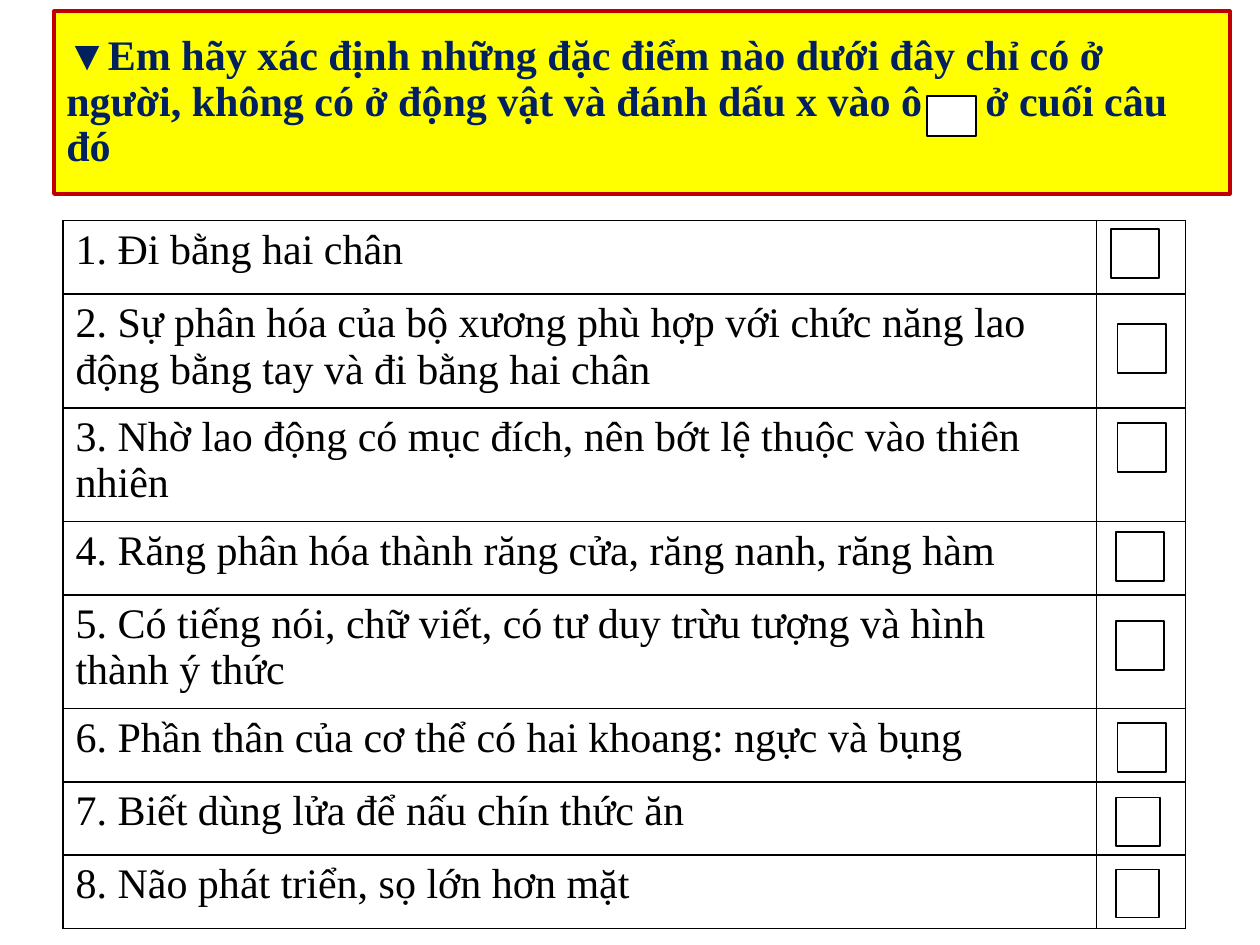
from dataclasses import dataclass

from lxml import etree
from pptx import Presentation
from pptx import util as u
from pptx.dml.color import RGBColor
from pptx.enum import shapes, text
from pptx.oxml import ns


@dataclass(frozen=True)
class Theme:
    font: str = "Times New Roman"
    size: int = 24
    ink: str = "000000"
    paper: str = "FFFFFF"
    heading_ink: str = "002060"
    heading_fill: str = "FFFF00"
    heading_line: str = "C00000"
    thin: float = 1
    thick: float = 2.25


@dataclass(frozen=True)
class Frame:
    """Left, top, width and height in centimetres."""
    left: float
    top: float
    width: float = 0.97
    height: float = 0.99

    def lengths(self) -> list:
        return [u.Cm(n) for n in (self.left, self.top, self.width, self.height)]


@dataclass(frozen=True)
class Trait:
    wording: str
    row_height: float
    checkbox: Frame


THEME = Theme()
ONE_LINE, TWO_LINES = 1.48, 2.29
COLUMN_WIDTHS = (20.83, 1.8)
TABLE_LEFT, TABLE_TOP = 1.27, 4.45
HEADING = Frame(1.09, 0.23, 23.7, 3.68)
HEADING_CHECKBOX = Frame(18.69, 1.93, 0.99, 0.81)
HEADING_START = ("▼Em hãy xác định những đặc điểm nào dưới đây chỉ có ở người, "
                 "không có ở động vật và đánh dấu x vào ô")
HEADING_END = "ở cuối câu đó"
CHECKBOX_GAP = u.Pt(30)

TRAITS = [
    Trait("1. Đi bằng hai chân", ONE_LINE, Frame(22.4, 4.62)),
    Trait("2. Sự phân hóa của bộ xương phù hợp với chức năng lao động "
          "bằng tay và đi bằng hai chân", TWO_LINES, Frame(22.53, 6.53)),
    Trait("3. Nhờ lao động có mục đích, nên bớt lệ thuộc vào thiên nhiên",
          TWO_LINES, Frame(22.53, 8.53)),
    Trait("4. Răng phân hóa thành răng cửa, răng nanh, răng hàm",
          ONE_LINE, Frame(22.5, 10.72)),
    Trait("5. Có tiếng nói, chữ viết, có tư duy trừu tượng và hình thành ý thức",
          TWO_LINES, Frame(22.5, 12.52)),
    Trait("6. Phần thân của cơ thể có hai khoang: ngực và bụng",
          ONE_LINE, Frame(22.53, 14.58)),
    Trait("7. Biết dùng lửa để nấu chín thức ăn",
          ONE_LINE, Frame(22.5, 16.08, 0.89, 0.97)),
    Trait("8. Não phát triển, sọ lớn hơn mặt",
          ONE_LINE, Frame(22.5, 17.53, 0.86, 0.97)),
]


def set_all(target, values: dict) -> None:
    for name, value in values.items():
        setattr(target, name, value)


def add_span(para, wording: str, color: str, bold: bool = False):
    span = para.add_run()
    span.text = wording
    set_all(span.font, {"name": THEME.font, "size": u.Pt(THEME.size), "bold": bold})
    span.font.color.rgb = RGBColor.from_string(color)
    return span


def add_box(page, frame: Frame, fill: str, line: str, weight: float):
    box = page.shapes.add_shape(shapes.MSO_SHAPE.RECTANGLE, *frame.lengths())
    box.shadow.inherit = False
    box.fill.solid()
    box.fill.fore_color.rgb = RGBColor.from_string(fill)
    box.line.color.rgb = RGBColor.from_string(line)
    box.line.width = u.Pt(weight)
    return box


def add_checkbox(page, frame: Frame) -> None:
    add_box(page, frame, THEME.paper, THEME.ink, THEME.thin)


def add_heading(page) -> None:
    box = add_box(page, HEADING, THEME.heading_fill, THEME.heading_line, THEME.thick)
    set_all(box.text_frame, {"word_wrap": True,
                             "vertical_anchor": text.MSO_ANCHOR.MIDDLE})
    para = box.text_frame.paragraphs[0]
    set_all(para, {"alignment": text.PP_ALIGN.LEFT, "line_spacing": 0.9})
    add_span(para, HEADING_START, THEME.heading_ink, True)
    # One widened space leaves room for the checkbox
    gap = add_span(para, " ", THEME.heading_ink, True)
    gap.font._element.set("spc", str(int(CHECKBOX_GAP.pt * 100)))
    add_span(para, HEADING_END, THEME.heading_ink, True)


def style_cell(cell) -> None:
    properties = cell._tc.get_or_add_tcPr()
    for side in ("a:lnL", "a:lnR", "a:lnT", "a:lnB"):
        border = etree.SubElement(properties, ns.qn(side), w=str(u.Pt(THEME.thin)))
        solid = etree.SubElement(border, ns.qn("a:solidFill"))
        etree.SubElement(solid, ns.qn("a:srgbClr"), val=THEME.ink)
    cell.fill.solid()
    cell.fill.fore_color.rgb = RGBColor.from_string(THEME.paper)


def add_trait_table(page) -> None:
    frame = Frame(TABLE_LEFT, TABLE_TOP, sum(COLUMN_WIDTHS),
                  sum(trait.row_height for trait in TRAITS))
    table = page.shapes.add_table(len(TRAITS), len(COLUMN_WIDTHS),
                                  *frame.lengths()).table
    set_all(table, {"first_row": False, "horz_banding": False})
    for column, width in zip(table.columns, COLUMN_WIDTHS):
        column.width = u.Cm(width)
    for row, trait in zip(table.rows, TRAITS):
        row.height = u.Cm(trait.row_height)
        for cell in row.cells:
            style_cell(cell)
        add_span(row.cells[0].text_frame.paragraphs[0], trait.wording, THEME.ink)


def main() -> None:
    deck = Presentation()
    set_all(deck, {"slide_width": u.Cm(25.4), "slide_height": u.Cm(19.05)})
    page = deck.slides.add_slide(deck.slide_layouts[6])

    # Question and list of traits
    add_heading(page)
    add_trait_table(page)

    # Checkboxes
    for frame in [HEADING_CHECKBOX, *(trait.checkbox for trait in TRAITS)]:
        add_checkbox(page, frame)

    deck.save("out.pptx")


if __name__ == "__main__":
    main()
